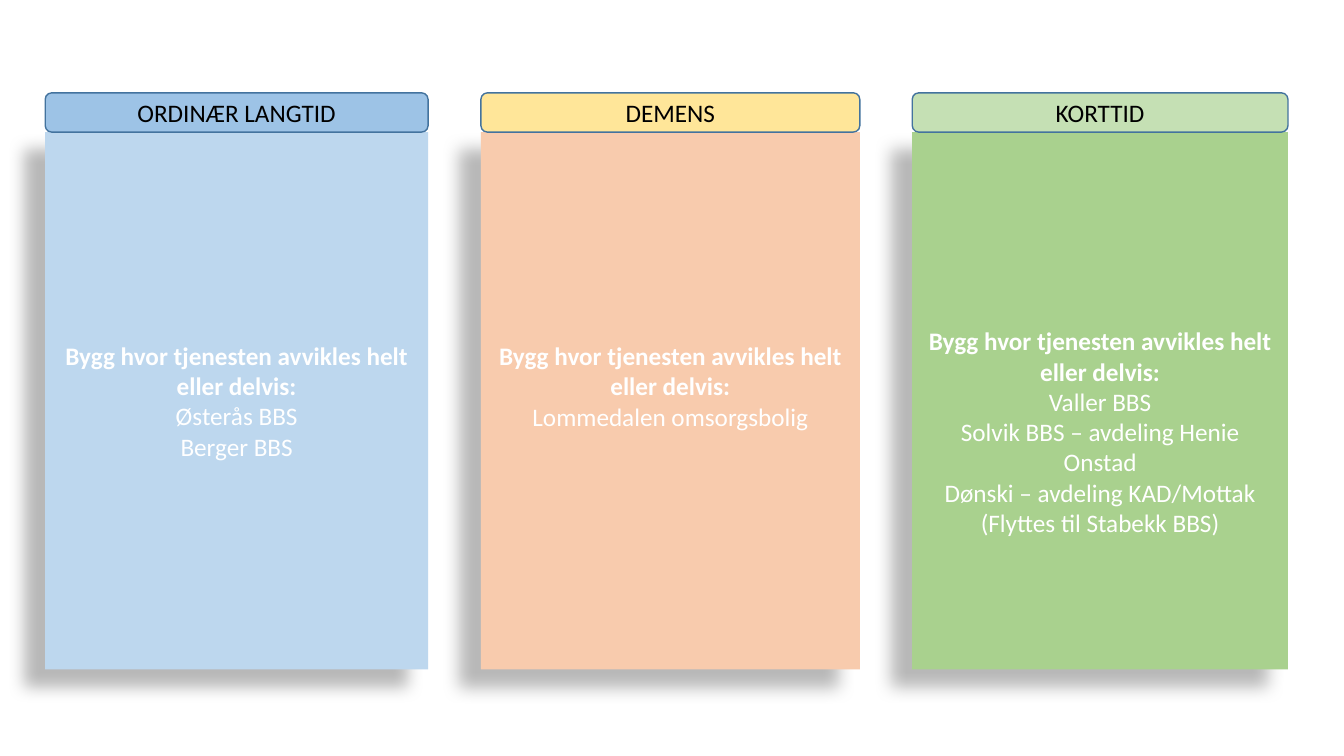
from lxml import etree
from pptx import Presentation
from pptx.dml.color import RGBColor
from pptx.enum.shapes import MSO_SHAPE
from pptx.enum.text import MSO_ANCHOR, PP_ALIGN
from pptx.oxml.ns import qn
from pptx.util import Cm, Pt

RECTANGLE = MSO_SHAPE.RECTANGLE
ROUNDED = MSO_SHAPE.ROUNDED_RECTANGLE
MIDDLE = MSO_ANCHOR.MIDDLE
CENTER = PP_ALIGN.CENTER

BLACK = RGBColor(0x00, 0x00, 0x00)
WHITE = RGBColor(0xFF, 0xFF, 0xFF)
OUTLINE = RGBColor(0x43, 0x73, 0x9E)
LIGHT_BLUE = RGBColor(0xBD, 0xD7, 0xEE)
BLUE = RGBColor(0x9D, 0xC3, 0xE6)
PEACH = RGBColor(0xF8, 0xCB, 0xAD)
YELLOW = RGBColor(0xFF, 0xE6, 0x99)
GREEN = RGBColor(0xA9, 0xD1, 0x8E)
LIGHT_GREEN = RGBColor(0xC5, 0xE0, 0xB4)

HEADER_TOP, HEADER_HEIGHT = 2.34, 0.99
CARD_TOP, CARD_HEIGHT = HEADER_TOP + HEADER_HEIGHT, 13.54
INSET = 0.13

INTRO = "Bygg hvor tjenesten avvikles helt eller delvis:"

# left, width, header, header fill, card fill, buildings, extra top and bottom inset
SERVICES = [
    (1.14, 9.65, "ORDINÆR LANGTID", BLUE, LIGHT_BLUE,
     ["Østerås BBS", "Berger BBS"], 0, 0),
    (12.12, 9.55, "DEMENS", YELLOW, PEACH,
     ["Lommedalen omsorgsbolig"], 0, 0.76),
    (22.99, 9.47, "KORTTID", LIGHT_GREEN, GREEN,
     ["Valler BBS", "Solvik BBS – avdeling Henie Onstad",
      "Dønski – avdeling KAD/Mottak", "(Flyttes til Stabekk BBS)"], 1.55, 0),
]


def write_line(paragraph, text, *, color, bold=False, size=18, font="Calibri"):
    paragraph.alignment = CENTER
    run = paragraph.add_run()
    run.text = text
    run.font.name = font
    run.font.size = Pt(size)
    run.font.bold = bold
    run.font.color.rgb = color


def add_panel(slide, kind, left, top, width, height, fill):
    panel = slide.shapes.add_shape(kind, Cm(left), Cm(top), Cm(width), Cm(height))
    panel.shadow.inherit = False
    panel.fill.solid()
    panel.fill.fore_color.rgb = fill
    panel.text_frame.word_wrap = True
    panel.text_frame.vertical_anchor = MIDDLE
    return panel


def add_shadow(panel):
    effects = panel._element.spPr.find(qn("a:effectLst"))
    shadow = etree.SubElement(
        effects, qn("a:outerShdw"), blurRad=str(Pt(11.8)), dist=str(Pt(19.7)),
        dir=str(141 * 60000), algn="tr", rotWithShape="0")
    color = etree.SubElement(shadow, qn("a:srgbClr"), val=str(BLACK))
    etree.SubElement(color, qn("a:alpha"), val="28000")


def add_card(slide, left, width, fill, buildings, extra_top, extra_bottom):
    card = add_panel(slide, RECTANGLE, left, CARD_TOP, width, CARD_HEIGHT, fill)
    card.line.fill.background()
    add_shadow(card)
    frame = card.text_frame
    frame.margin_top = Cm(INSET + extra_top)
    frame.margin_bottom = Cm(INSET + extra_bottom)
    write_line(frame.paragraphs[0], INTRO, color=WHITE, bold=True)
    for building in buildings:
        write_line(frame.add_paragraph(), building, color=WHITE)


def add_header(slide, left, width, title, fill):
    header = add_panel(slide, ROUNDED, left, HEADER_TOP, width, HEADER_HEIGHT, fill)
    header.line.color.rgb = OUTLINE
    header.line.width = Pt(1)
    write_line(header.text_frame.paragraphs[0], title, color=BLACK)


def main():
    deck = Presentation()
    deck.slide_width, deck.slide_height = Cm(33.87), Cm(19.05)
    slide = deck.slides.add_slide(deck.slide_layouts[6])

    # One card with a header for each service
    for left, width, title, header_fill, card_fill, buildings, top, bottom in SERVICES:
        add_card(slide, left, width, card_fill, buildings, top, bottom)
        add_header(slide, left, width, title, header_fill)

    deck.save("out.pptx")


if __name__ == "__main__":
    main()
